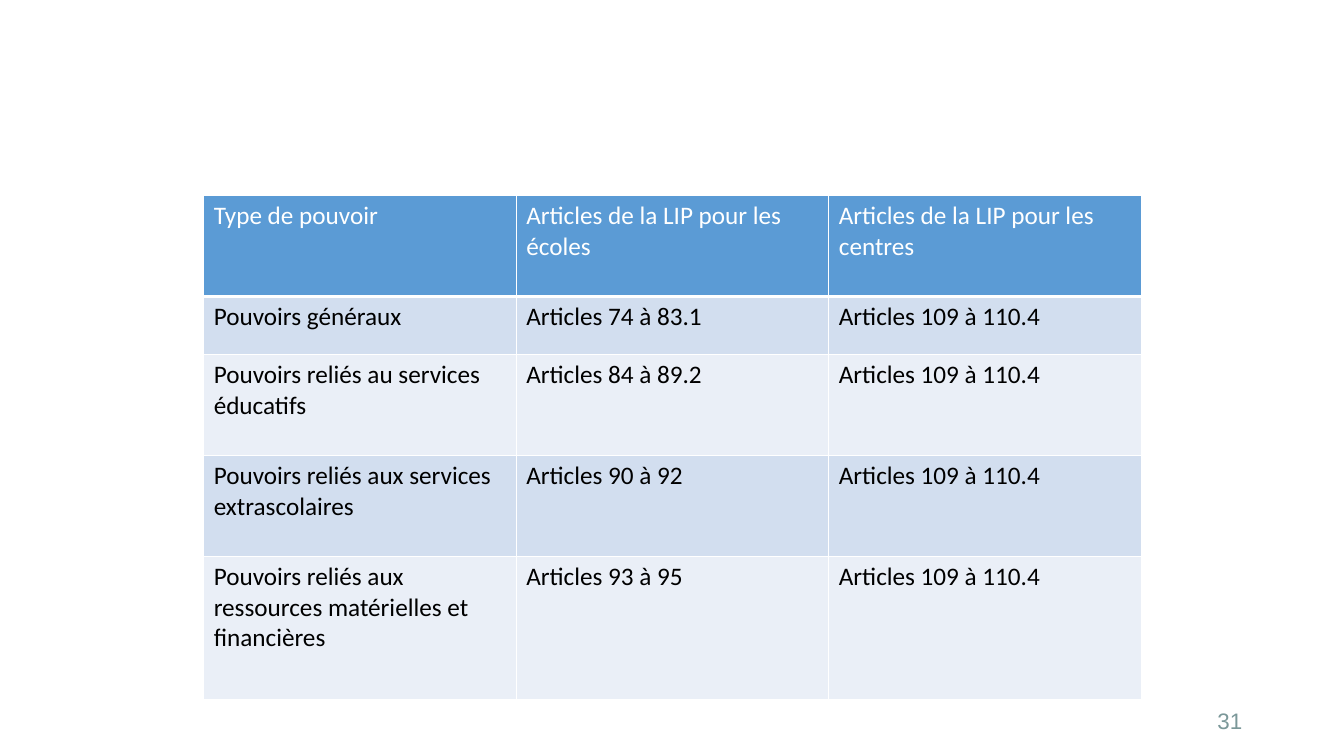
from dataclasses import dataclass

from lxml.etree import SubElement
from pptx import Presentation
from pptx.dml.color import RGBColor
from pptx.enum.text import MSO_ANCHOR, PP_ALIGN
from pptx.oxml.ns import qn
from pptx.util import Inches, Pt

COLORS = {
    "header": "5B9BD5",
    "band_dark": "D2DEEF",
    "band_light": "EAEFF7",
    "white": "FFFFFF",
    "black": "000000",
    "number": "7B9899",
}
COL_WIDTH = 3.1


@dataclass
class Row:
    """One table row: its height, cell texts and colours."""

    height: float
    texts: tuple[str, str, str]
    fill: str
    color: str = "black"


def power(height: float, name: str, articles: str, fill: str) -> Row:
    """Return a body row; the articles for centres are always the same."""
    return Row(height, (name, articles, "Articles 109 à 110.4"), fill)


ROWS = [
    Row(1, ("Type de pouvoir", "Articles de la LIP pour les écoles",
            "Articles de la LIP pour les centres"), "header", "white"),
    power(0.58, "Pouvoirs généraux", "Articles 74 à 83.1", "band_dark"),
    power(1, "Pouvoirs reliés au services éducatifs", "Articles 84 à 89.2", "band_light"),
    power(1, "Pouvoirs reliés aux services extrascolaires", "Articles 90 à 92", "band_dark"),
    power(1.42, "Pouvoirs reliés aux ressources matérielles et financières",
          "Articles 93 à 95", "band_light"),
]


def rgb(name: str) -> RGBColor:
    """Return a named colour."""
    return RGBColor.from_string(COLORS[name])


def set_font(p, name: str, size: float, color: str) -> None:
    """Format a whole paragraph."""
    p.font.name = name
    p.font.size = Pt(size)
    p.font.color.rgb = rgb(color)


def add_borders(cell, top: float, bottom: float) -> None:
    """Give a cell white borders, with widths in points."""
    tcPr = cell._tc.get_or_add_tcPr()
    for side, width in {"L": 1, "R": 1, "T": top, "B": bottom}.items():
        ln = SubElement(tcPr, qn(f"a:ln{side}"), w=str(Pt(width)))
        fill = SubElement(ln, qn("a:solidFill"))
        SubElement(fill, qn("a:srgbClr"), val=COLORS["white"])


def add_powers_table(s) -> None:
    """Draw the table of powers and articles."""
    columns = len(ROWS[0].texts)
    table = s.shapes.add_table(
        len(ROWS), columns, Inches(2.02), Inches(1.94),
        Inches(COL_WIDTH * columns), Inches(sum(row.height for row in ROWS))).table
    for column in table.columns:
        column.width = Inches(COL_WIDTH)
    for i, row in enumerate(ROWS):
        table.rows[i].height = Inches(row.height)
        for j, text in enumerate(row.texts):
            cell = table.cell(i, j)
            add_borders(cell, 3 if i == 1 else 1, 3 if i == 0 else 1)
            cell.fill.solid()
            cell.fill.fore_color.rgb = rgb(row.fill)
            cell.text = text
            p = cell.text_frame.paragraphs[0]
            set_font(p, "Calibri", 18, row.color)
            p.font.bold = False


def add_slide_number(s) -> None:
    """Draw the slide number at the bottom right."""
    tf = s.shapes.add_textbox(Inches(9.42), Inches(6.95), Inches(3), Inches(0.4)).text_frame
    tf.word_wrap = True
    tf.vertical_anchor = MSO_ANCHOR.MIDDLE
    p = tf.paragraphs[0]
    p.text = "31"
    p.alignment = PP_ALIGN.RIGHT
    set_font(p, "Arial", 16, "number")


def main() -> None:
    """Build and save the slide."""
    prs = Presentation()
    prs.slide_width, prs.slide_height = Inches(13.33), Inches(7.5)
    s = prs.slides.add_slide(prs.slide_layouts[6])
    add_powers_table(s)
    add_slide_number(s)
    prs.save("out.pptx")


if __name__ == "__main__":
    main()
